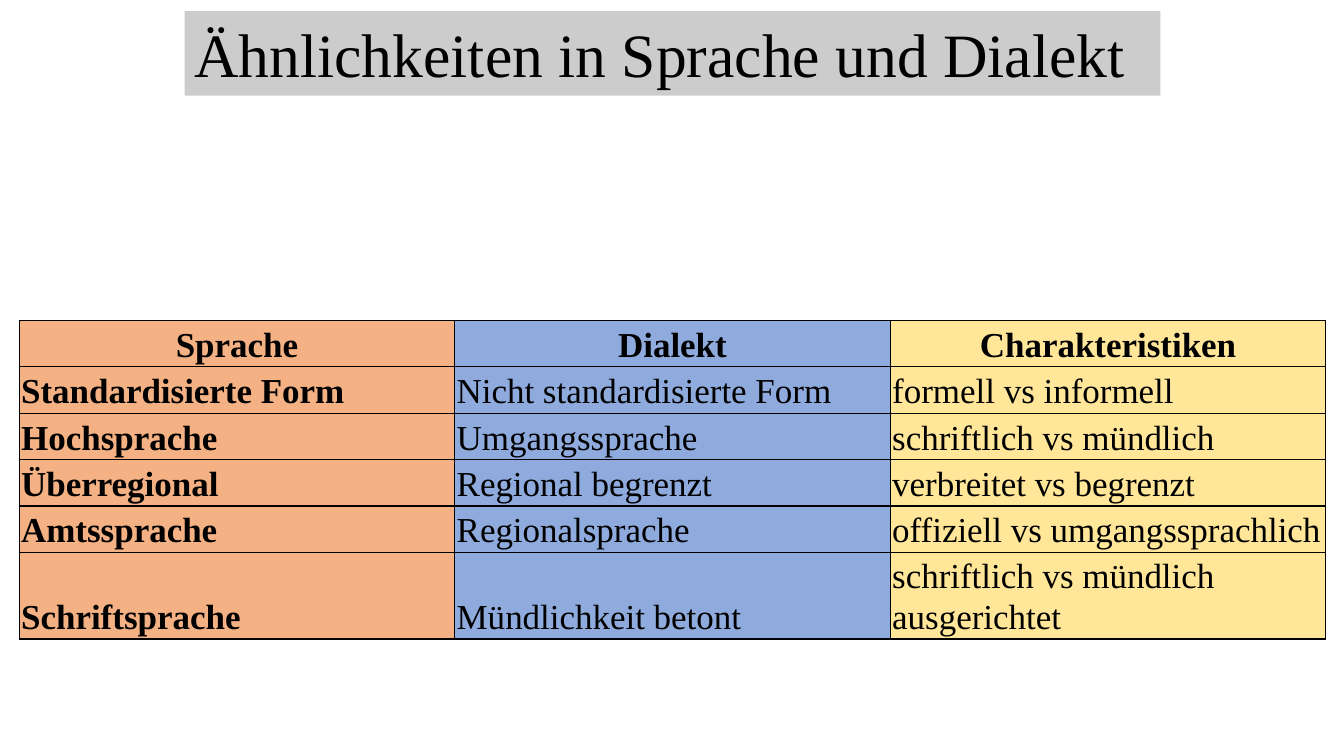
from lxml import etree
from pptx import Presentation
from pptx.dml.color import RGBColor
from pptx.enum.text import MSO_ANCHOR, PP_ALIGN
from pptx.oxml.ns import qn
from pptx.util import Inches, Pt

TITLE = "Ähnlichkeiten in Sprache und Dialekt"
ROWS = [
    ("Sprache", "Dialekt", "Charakteristiken"),
    ("Standardisierte Form", "Nicht standardisierte Form", "formell vs informell"),
    ("Hochsprache", "Umgangssprache", "schriftlich vs mündlich"),
    ("Überregional", "Regional begrenzt", "verbreitet vs begrenzt"),
    ("Amtssprache", "Regionalsprache", "offiziell vs umgangssprachlich"),
    ("Schriftsprache", "Mündlichkeit betont", "schriftlich vs mündlich ausgerichtet"),
]

FONT = "Times New Roman"
BLACK = RGBColor(0x00, 0x00, 0x00)
ORANGE = RGBColor(0xF4, 0xB1, 0x83)
BLUE = RGBColor(0x8F, 0xAA, 0xDC)
YELLOW = RGBColor(0xFF, 0xE6, 0x99)
COLUMN_FILLS = (ORANGE, BLUE, YELLOW)

LEFT, CENTER = PP_ALIGN.LEFT, PP_ALIGN.CENTER
BOTTOM = MSO_ANCHOR.BOTTOM

COLUMN_WIDTH = 4.32
ROW_HEIGHT, LAST_ROW_HEIGHT = 0.46, 0.86
CELL_MARGIN = Inches(0.02)


def add_run(p, text, size, bold=False):
    r = p.add_run()
    r.text = text
    r.font.name = FONT
    r.font.size = Pt(size)
    r.font.bold = bold
    r.font.color.rgb = BLACK


def add_borders(cell):
    """Draw a 1 pt black line on all four sides; lines must precede the fill."""
    tc_pr = cell._tc.get_or_add_tcPr()
    for i, side in enumerate(("a:lnL", "a:lnR", "a:lnT", "a:lnB")):
        ln = etree.Element(qn(side), w=str(Pt(1)))
        fill = etree.SubElement(ln, qn("a:solidFill"))
        etree.SubElement(fill, qn("a:srgbClr"), val=str(BLACK))
        tc_pr.insert(i, ln)


def add_comparison_table(slide):
    heights = [ROW_HEIGHT] * (len(ROWS) - 1) + [LAST_ROW_HEIGHT]
    columns = len(COLUMN_FILLS)
    table = slide.shapes.add_table(
        len(ROWS), columns, Inches(0.19), Inches(3.18),
        Inches(COLUMN_WIDTH * columns), Inches(sum(heights))).table
    table.horz_banding = False
    for column in table.columns:
        column.width = Inches(COLUMN_WIDTH)
    for i, (texts, height) in enumerate(zip(ROWS, heights)):
        table.rows[i].height = Inches(height)
        for j, (text, color) in enumerate(zip(texts, COLUMN_FILLS)):
            cell = table.cell(i, j)
            cell.fill.solid()
            cell.fill.fore_color.rgb = color
            cell.vertical_anchor = BOTTOM
            cell.margin_left = cell.margin_right = CELL_MARGIN
            cell.margin_top = cell.margin_bottom = CELL_MARGIN
            add_borders(cell)
            p = cell.text_frame.paragraphs[0]
            p.alignment = CENTER if i == 0 else LEFT
            p.line_spacing = 1.07
            add_run(p, text, 25, bold=i == 0 or j == 0)


def add_title(slide):
    sp = slide.shapes.add_textbox(Inches(1.83), Inches(0.11), Inches(9.68), Inches(0.84))
    sp.fill.solid()
    sp.fill.fore_color.rgb = BLACK
    color = sp.fill._xPr.find(".//" + qn("a:srgbClr"))
    etree.SubElement(color, qn("a:alpha"), val="20000")
    tf = sp.text_frame
    tf.word_wrap = True
    add_run(tf.paragraphs[0], TITLE, 44)


def main():
    prs = Presentation()
    prs.slide_width, prs.slide_height = Inches(13.33), Inches(7.5)
    slide = prs.slides.add_slide(prs.slide_layouts[6])
    add_comparison_table(slide)
    add_title(slide)
    prs.save("out.pptx")


if __name__ == "__main__":
    main()
